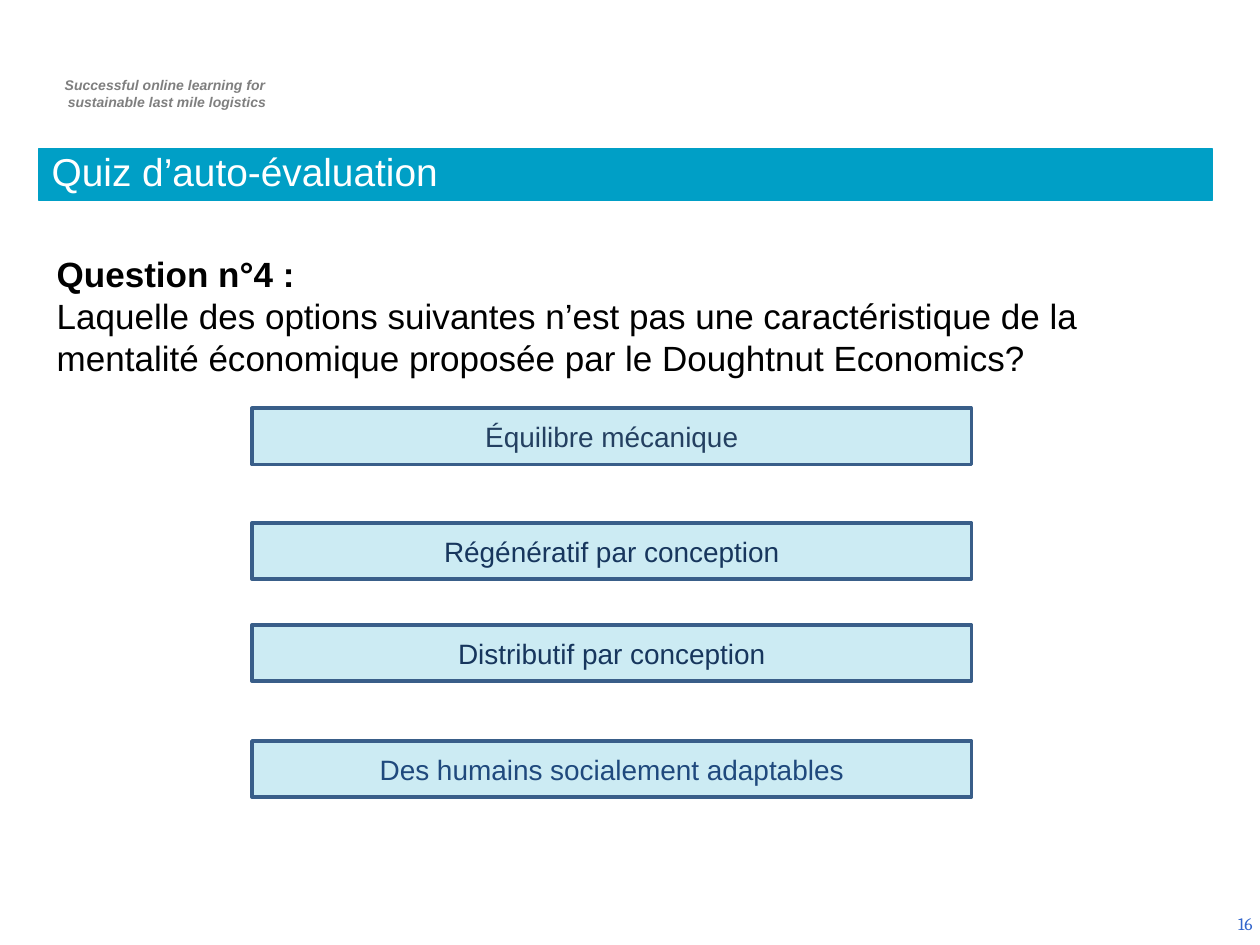
"""Build the self-assessment quiz slide for question 4."""
from dataclasses import dataclass

from lxml import etree
from pptx import Presentation
from pptx import util as u
from pptx.dml.color import RGBColor
from pptx.enum import shapes, text
from pptx.oxml import ns


@dataclass(frozen=True)
class Theme:
    accent: str = "009FC6"
    outline: str = "395E89"
    white: str = "FFFFFF"
    black: str = "000000"
    grey: str = "7F7F7F"
    number: str = "3366CC"
    navy: str = "17365D"
    slate: str = "244061"
    blue: str = "1F497D"
    font: str = "Arial"
    number_font: str = "Cambria"
    title_size: float = 22.2
    question_size: float = 20
    answer_size: float = 16
    number_size: float = 10
    tagline_size: float = 8


THEME = Theme()
ALIGN = text.PP_ALIGN
ANCHOR = text.MSO_ANCHOR
ANSWERS = [
    ("Équilibre mécanique", 233.3, THEME.slate),
    ("Régénératif par conception", 298.8, THEME.navy),
    ("Distributif par conception", 357.1, THEME.navy),
    ("Des humains socialement adaptables", 423.4, THEME.blue),
]


def place(shape, left, top, width, height):
    shape.left, shape.top = u.Pt(left), u.Pt(top)
    shape.width, shape.height = u.Pt(width), u.Pt(height)


def write(shape, content, size, color, font=THEME.font, align=ALIGN.LEFT, anchor=ANCHOR.TOP,
          bold=False, italic=False, indent=0, line_spacing=1.0, bold_first=False):
    frame = shape.text_frame
    frame.word_wrap = True
    frame.auto_size = text.MSO_AUTO_SIZE.NONE
    frame.vertical_anchor = anchor
    frame.text = content
    for index, paragraph in enumerate(frame.paragraphs):
        properties = paragraph._p.get_or_add_pPr()
        properties.set("marL", str(u.Pt(indent)))
        properties.set("indent", "0")
        etree.SubElement(properties, ns.qn("a:buNone"))
        paragraph.alignment = align
        paragraph.line_spacing = line_spacing
        paragraph.space_before = u.Pt(0)
        paragraph.font.bold = bold or (bold_first and index == 0)
        for run in paragraph.runs:
            run.font.name = font
            run.font.size = u.Pt(size)
            run.font.bold = bold or (bold_first and index == 0)
            run.font.italic = italic
            run.font.color.rgb = RGBColor.from_string(color)


def paint(shape, fill, line, line_width, opacity=100):
    shape.fill.solid()
    shape.fill.fore_color.rgb = RGBColor.from_string(fill)
    shape.line.color.rgb = RGBColor.from_string(line)
    shape.line.width = u.Pt(line_width)
    if opacity < 100:
        color = shape._element.spPr.find(ns.qn("a:solidFill"))[0]
        etree.SubElement(color, ns.qn("a:alpha"), val=str(opacity * 1000))


def add_label(slide, box, content, **style):
    label = slide.shapes.add_textbox(*map(u.Pt, box))
    write(label, content, **style)


def add_answer(slide, content, top, color):
    answer = slide.shapes.add_shape(
        shapes.MSO_SHAPE.RECTANGLE, *map(u.Pt, (144, top, 411.1, 32.2)))
    answer.shadow.inherit = False
    paint(answer, THEME.accent, THEME.outline, 2, opacity=20)
    write(answer, content, THEME.answer_size, color, align=ALIGN.CENTER, anchor=ANCHOR.MIDDLE)


def add_title(slide, content):
    title = slide.shapes.title
    place(title, 22.3, 85, 670.3, 29.5)
    paint(title, THEME.accent, THEME.accent, 0.75)
    write(title, content, THEME.title_size, THEME.white, anchor=ANCHOR.BOTTOM, line_spacing=0.8)


def add_question(slide, heading, question):
    body = slide.placeholders[1]
    place(body, 25.2, 140.4, 670.3, 104.4)
    write(body, f"{heading}\n{question}", THEME.question_size, THEME.black, bold_first=True)


def main():
    presentation = Presentation()
    presentation.slide_width, presentation.slide_height = u.Pt(720), u.Pt(540)
    slide = presentation.slides.add_slide(presentation.slide_layouts[1])
    add_label(slide, (20.9, 40.3, 146.2, 26.6),
              "Successful online learning for \nsustainable last mile logistics",
              size=THEME.tagline_size, color=THEME.grey, align=ALIGN.CENTER,
              bold=True, italic=True, indent=3)
    add_title(slide, "Quiz d’auto-évaluation")
    add_question(slide, "Question n°4 :",
                 "Laquelle des options suivantes n’est pas une caractéristique de la "
                 "mentalité économique proposée par le Doughtnut Economics?")
    for content, top, color in ANSWERS:
        add_answer(slide, content, top, color)
    add_label(slide, (555.1, 513.4, 167.8, 28.8), "16", size=THEME.number_size,
              color=THEME.number, font=THEME.number_font, align=ALIGN.RIGHT,
              anchor=ANCHOR.MIDDLE)
    presentation.save("out.pptx")


if __name__ == "__main__":
    main()
